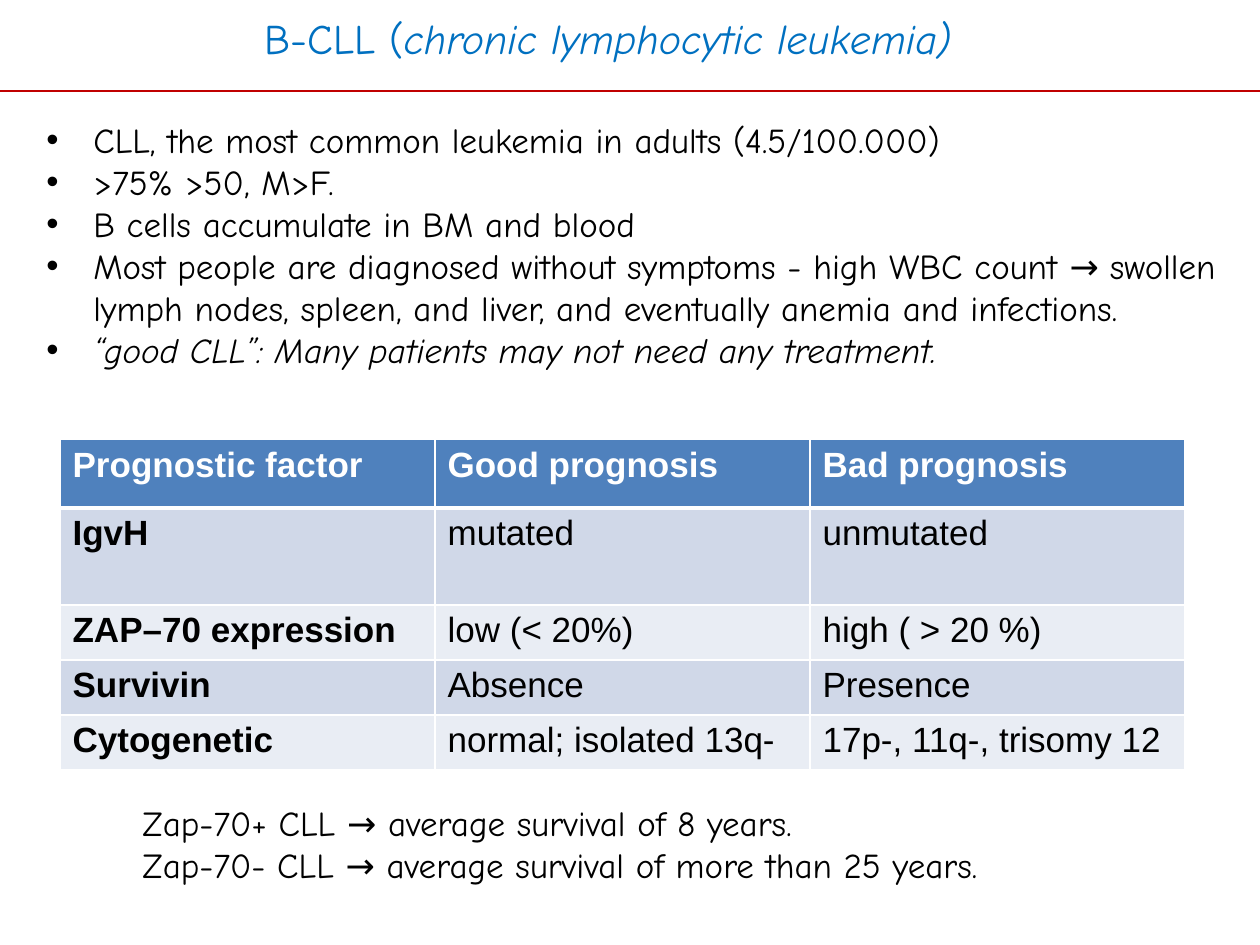
from lxml.etree import SubElement
from pptx import Presentation
from pptx.dml.color import RGBColor as RGB
from pptx.enum.shapes import MSO_CONNECTOR as CONN
from pptx.enum.text import MSO_AUTO_SIZE as AUTO
from pptx.oxml import parse_xml
from pptx.oxml.ns import nsdecls, qn
from pptx.util import Pt

PX = 914400 // 126
COLORS = {"title": "0070C0", "rule": "C00000", "text": "000000", "white": "FFFFFF",
          "head": "4F81BD", "odd": "D0D8E8", "even": "E9EDF4"}
HAND, SANS = "Comic Neue", "Arial"

TITLE = [[("B-CLL (", False), ("chronic lymphocytic leukemia)", True)]]
FACTS = [
    [("CLL, the most common leukemia in adults (4.5/100.000)", False)],
    [(">75% >50, M>F.", False)],
    [("B cells accumulate in BM and blood", False)],
    [("Most people are diagnosed without symptoms - high WBC count → swollen "
      "lymph nodes, spleen, and liver, and eventually anemia and infections.", False)],
    [("“good CLL”: Many patients may not need any treatment.", True)],
]
SURVIVAL = [
    [("Zap-70+ CLL → average survival of 8 years.", False)],
    [("Zap-70- CLL → average survival of more than 25 years.", False)],
]
TEXTS = [
    ((252, 6, 756, 63), TITLE, 24, "title", False),
    ((34, 112, 1211, 310), FACTS, 20, "text", True),
    ((130, 795, 999, 97), SURVIVAL, 20, "text", False),
]
PROGNOSIS = [
    ("Prognostic factor", "Good prognosis", "Bad prognosis"),
    ("IgvH", "mutated", "unmutated"),
    ("ZAP–70 expression", "low (< 20%)", "high ( > 20 %)"),
    ("Survivin", "Absence", "Presence"),
    ("Cytogenetic", "normal; isolated 13q-", "17p-, 11q-, trisomy 12"),
]
TABLE_LEFT, TABLE_TOP, COL_WIDTH = 60, 439, 375
ROW_HEIGHTS = [69, 97, 55, 55, 55]
BULLET_INDENT = 47


def px(*values):
    return [v * PX for v in values]


def color(name):
    return RGB.from_string(COLORS[name])


def add_run(p, text, color_name, **fmt):
    r = p.add_run()
    r.text = text
    for key, value in fmt.items():
        setattr(r.font, key, value)
    r.font.color.rgb = color(color_name)


def add_bullet(p):
    pPr = p._p.get_or_add_pPr()
    pPr.set("marL", str(BULLET_INDENT * PX))
    pPr.set("indent", str(-BULLET_INDENT * PX))
    SubElement(pPr, qn("a:buFont"), typeface=SANS)
    SubElement(pPr, qn("a:buChar"), char="•")


def add_text(s, box, paragraphs, size, color_name, bulleted):
    tf = s.shapes.add_textbox(*px(*box)).text_frame
    tf.word_wrap = True
    tf.auto_size = AUTO.SHAPE_TO_FIT_TEXT
    for i, runs in enumerate(paragraphs):
        p = tf.add_paragraph() if i else tf.paragraphs[0]
        if bulleted:
            add_bullet(p)
        for text, italic in runs:
            add_run(p, text, color_name, size=Pt(size), name=HAND, italic=italic)


def set_borders(cell, widths):
    tcPr = cell._tc.get_or_add_tcPr()
    for i, (side, width) in enumerate(widths.items()):
        tcPr.insert(i, parse_xml(
            f'<a:ln{side} {nsdecls("a")} w="{Pt(width)}"><a:solidFill>'
            f'<a:srgbClr val="{COLORS["white"]}"/></a:solidFill></a:ln{side}>'))


def add_prognosis_table(s):
    n_rows, n_cols = len(PROGNOSIS), len(PROGNOSIS[0])
    box = px(TABLE_LEFT, TABLE_TOP, COL_WIDTH * n_cols, sum(ROW_HEIGHTS))
    table = s.shapes.add_table(n_rows, n_cols, *box).table
    for col in table.columns:
        col.width = COL_WIDTH * PX
    for i, texts in enumerate(PROGNOSIS):
        table.rows[i].height = ROW_HEIGHTS[i] * PX
        fill = "head" if i == 0 else "odd" if i % 2 else "even"
        for j, text in enumerate(texts):
            cell = table.cell(i, j)
            cell.fill.solid()
            cell.fill.fore_color.rgb = color(fill)
            set_borders(cell, {"L": 1, "R": 1, "T": 3 if i == 1 else 1, "B": 1 if i else 3})
            add_run(cell.text_frame.paragraphs[0], text, "text" if i else "white",
                    size=Pt(20), name=SANS, bold=i == 0 or j == 0)


def main():
    prs = Presentation()
    prs.slide_width, prs.slide_height = px(1260, 945)
    s = prs.slides.add_slide(prs.slide_layouts[6])
    rule = s.shapes.add_connector(CONN.STRAIGHT, *px(0, 91, 1260, 91))
    rule.line.color.rgb = color("rule")
    rule.line.width = Pt(1.5)
    SubElement(rule._element.spPr, qn("a:effectLst"))
    for text in TEXTS:
        add_text(s, *text)
    add_prognosis_table(s)
    prs.save("out.pptx")


if __name__ == "__main__":
    main()
